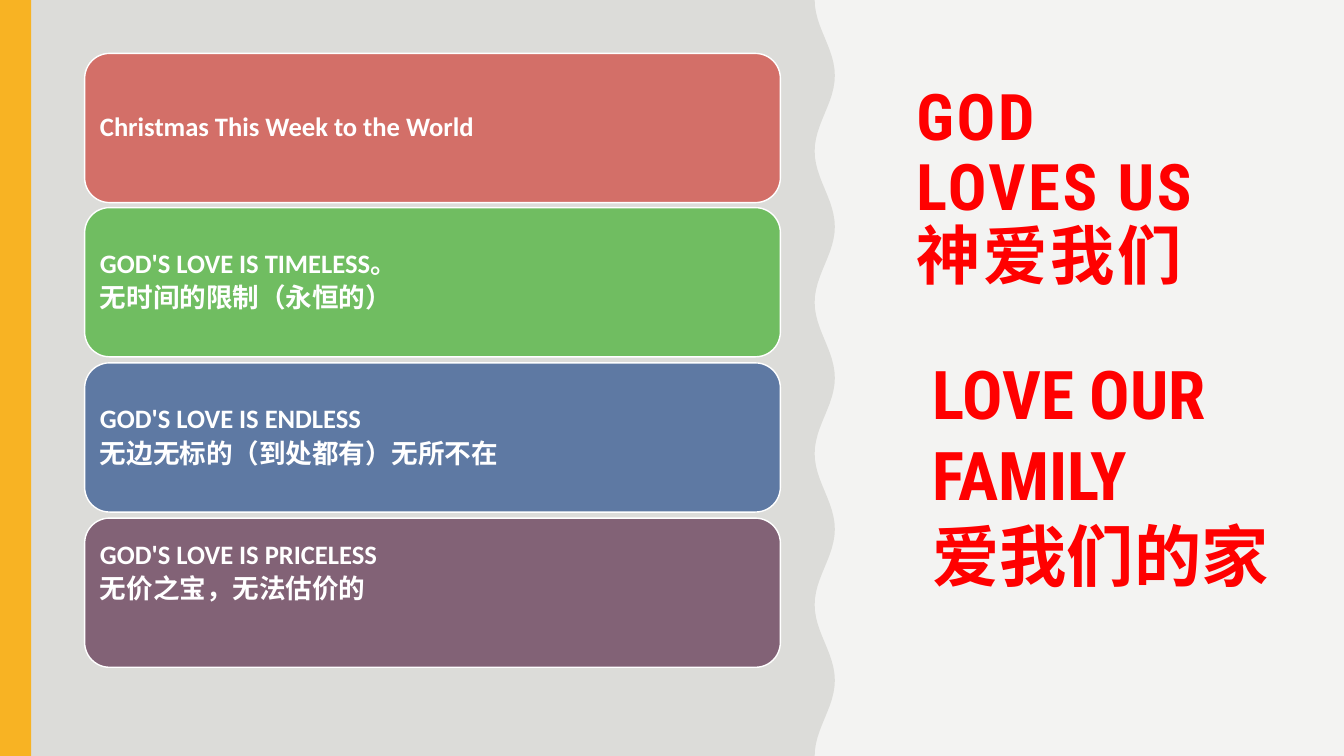
import math

import pptx
import pptx.dml.color
import pptx.enum.shapes
import pptx.enum.text
import pptx.util

PX_PER_INCH = 100
PAGE_WIDTH, PAGE_HEIGHT = 1333, 750
COLORS = {
    "page": "F3F3F2",
    "wave": "DCDCD9",
    "stripe": "F8B323",
    "white": "FFFFFF",
    "red": "FF0000",
    "coral": "D36F68",
    "green": "70BD61",
    "blue": "5E79A3",
    "plum": "826276",
}
CARDS = [
    ("coral", ["Christmas This Week to the World"], 8),
    ("green", ["GOD'S LOVE IS TIMELESS。", "无时间的限制（永恒的）"], 8),
    ("blue", ["GOD'S LOVE IS ENDLESS", "无边无标的（到处都有）无所不在"], 8),
    ("plum", ["GOD'S LOVE IS PRICELESS", "无价之宝，无法估价的"], 48),
]
CARD_FONT = {"name": "Calibri", "size": pptx.util.Pt(19), "bold": True}
TITLE_FONT = {"name": "Roboto Condensed", "size": pptx.util.Pt(45.9), "bold": True}
FAMILY_FONT = {**TITLE_FONT, "size": pptx.util.Pt(48)}


def px(length):
    return pptx.util.Emu(round(length * 914400 / PX_PER_INCH))


def rgb(name):
    return pptx.dml.color.RGBColor.from_string(COLORS[name])


def set_attributes(target, values):
    for name, value in values.items():
        setattr(target, name, value)


def paint(shape, color):
    shape.shadow.inherit = False
    shape.fill.solid()
    shape.fill.fore_color.rgb = rgb(color)
    shape.line.fill.background()


def write_lines(frame, lines, font, color, para_format):
    for index, line in enumerate(lines):
        para = frame.paragraphs[0] if index == 0 else frame.add_paragraph()
        set_attributes(para, {"alignment": pptx.enum.text.PP_ALIGN.LEFT, **para_format})
        span = para.add_run()
        span.text = line
        set_attributes(span.font, font)
        span.font.color.rgb = rgb(color)


def add_wave_panel(page, left, top, width, height):
    amplitude, waves, steps = 10, 5, 120
    points = [(px(left), px(top + height))]
    for step in range(steps + 1):
        share = step / steps
        swing = amplitude * (1 + math.cos(2 * math.pi * waves * share))
        points.insert(0, (px(left + width - swing), px(top + height * share)))
    builder = page.shapes.build_freeform(px(left), px(top), scale=1.0)
    builder.add_line_segments(list(reversed(points[:-1])) + points[-1:], close=True)
    paint(builder.convert_to_shape(), "wave")


def add_stripe(page, left, top, width, height):
    stripe = page.shapes.add_shape(
        pptx.enum.shapes.MSO_SHAPE.RECTANGLE, px(left), px(top), px(width), px(height)
    )
    paint(stripe, "stripe")


def add_cards(page, left, top, width, height):
    card_height = 148
    for index, (color, lines, bottom_inset) in enumerate(CARDS):
        offset = (height - card_height) * index // (len(CARDS) - 1)
        card = page.shapes.add_shape(
            pptx.enum.shapes.MSO_SHAPE.ROUNDED_RECTANGLE,
            px(left), px(top + offset), px(width), px(card_height),
        )
        paint(card, color)
        card.line.color.rgb = rgb("white")
        card.line.width = pptx.util.Pt(1)
        set_attributes(card.text_frame, {
            "word_wrap": True,
            "vertical_anchor": pptx.enum.text.MSO_ANCHOR.MIDDLE,
            "margin_left": px(8),
            "margin_right": px(8),
            "margin_top": px(8),
            "margin_bottom": px(bottom_inset),
        })
        spacing = {"line_spacing": 0.9, "space_after": pptx.util.Pt(4)}
        write_lines(card.text_frame, lines, CARD_FONT, "white", spacing)


def add_title(page, left, top, width, height):
    box = page.shapes.add_textbox(px(left), px(top), px(width), px(height))
    set_attributes(box.text_frame, {
        "word_wrap": True,
        "vertical_anchor": pptx.enum.text.MSO_ANCHOR.MIDDLE,
        "margin_bottom": px(145),
    })
    lines = ["GOD LOVES US", "神爱我们"]
    write_lines(box.text_frame, lines, TITLE_FONT, "red", {"line_spacing": 0.9})
    for para in box.text_frame.paragraphs:
        for span in para.runs:
            span.font._element.set("spc", "200")


def add_family_text(page, left, top, width, height):
    box = page.shapes.add_textbox(px(left), px(top), px(width), px(height))
    set_attributes(box.text_frame, {
        "word_wrap": False,
        "auto_size": pptx.enum.text.MSO_AUTO_SIZE.SHAPE_TO_FIT_TEXT,
    })
    lines = ["LOVE OUR", "FAMILY", "爱我们的家"]
    write_lines(box.text_frame, lines, FAMILY_FONT, "red", {})


def main():
    deck = pptx.Presentation()
    set_attributes(deck, {"slide_width": px(PAGE_WIDTH), "slide_height": px(PAGE_HEIGHT)})
    page = deck.slides.add_slide(deck.slide_layouts[6])
    page.background.fill.solid()
    page.background.fill.fore_color.rgb = rgb("page")
    add_title(page, 899, 141, 327, 234)
    add_wave_panel(page, 0, 0, 828, PAGE_HEIGHT)
    add_stripe(page, 0, 0, 31, PAGE_HEIGHT)
    add_cards(page, 84, 53, 690, 609)
    add_family_text(page, 915, 345, 357, 252)
    deck.save("out.pptx")


if __name__ == "__main__":
    main()
